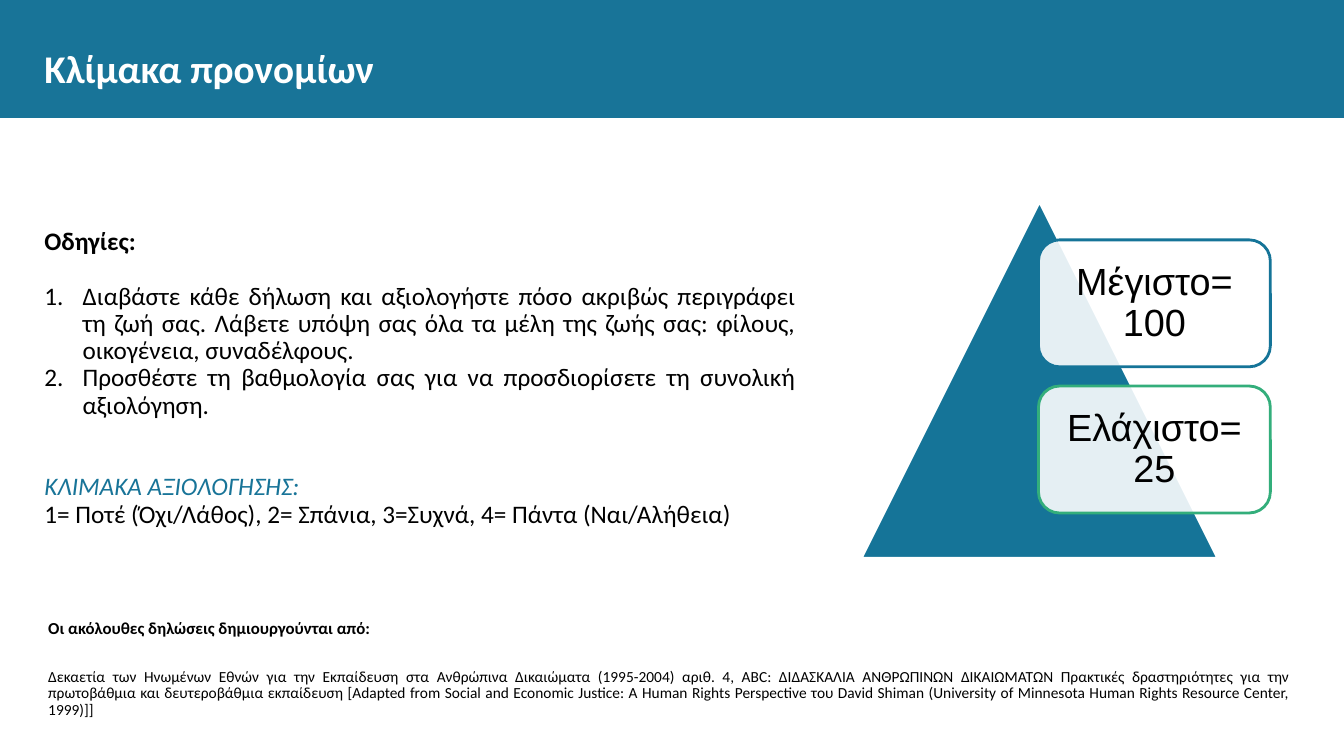
from lxml import etree
from pptx import Presentation
from pptx.dml.color import RGBColor
from pptx.enum.shapes import MSO_SHAPE
from pptx.enum.text import MSO_ANCHOR, PP_ALIGN
from pptx.oxml.ns import qn
from pptx.util import Pt

PX = 9144  # EMU, 100 px to the inch
TEAL = RGBColor(0x18, 0x74, 0x98)
PYRAMID_TEAL = RGBColor(0x15, 0x74, 0x98)
GREEN = RGBColor(0x33, 0xAE, 0x7B)
WHITE = RGBColor(0xFF, 0xFF, 0xFF)
BLACK = RGBColor(0, 0, 0)
LEFT, CENTER, JUSTIFY = PP_ALIGN.LEFT, PP_ALIGN.CENTER, PP_ALIGN.JUSTIFY
TOP, MIDDLE = MSO_ANCHOR.TOP, MSO_ANCHOR.MIDDLE

presentation = Presentation()
presentation.slide_width, presentation.slide_height = 1333 * PX, 750 * PX
slide = presentation.slides.add_slide(presentation.slide_layouts[6])


def add_filled_shape(kind, box, fill, line=None):
    shape = slide.shapes.add_shape(kind, *[length * PX for length in box])
    shape.shadow.inherit = False
    shape.fill.solid()
    shape.fill.fore_color.rgb = fill
    if line is None:
        shape.line.fill.background()
    else:
        shape.line.color.rgb = line
        shape.line.width = Pt(2)
    return shape


def write_paragraphs(shape, paragraphs, align, inset=0, anchor=TOP, spacing=0.9, font="Calibri"):
    """Fill a shape with (text, size, color, bold, italic, space before, numbered) rows."""
    frame = shape.text_frame
    frame.word_wrap = True
    frame.vertical_anchor = anchor
    frame.margin_left = frame.margin_right = inset * PX
    frame.margin_top = frame.margin_bottom = inset * PX
    for index, (text, size, color, bold, italic, before, numbered) in enumerate(paragraphs):
        paragraph = frame.add_paragraph() if index else frame.paragraphs[0]
        if numbered:
            properties = paragraph._p.get_or_add_pPr()
            properties.set("marL", str(38 * PX))
            properties.set("indent", str(-38 * PX))
            etree.SubElement(properties, qn("a:buFont"), typeface="+mj-lt")
            etree.SubElement(properties, qn("a:buAutoNum"), type="arabicPeriod")
        paragraph.alignment = align
        paragraph.line_spacing = spacing
        if before:
            paragraph.space_before = Pt(before)
        run = paragraph.add_run()
        run.text = text
        run.font.name = font
        run.font.size = Pt(size)
        run.font.bold = bold
        run.font.italic = italic
        run.font.color.rgb = color


# Header
add_filled_shape(MSO_SHAPE.RECTANGLE, (0, 0, 1333, 117), TEAL)
title = slide.shapes.add_textbox(44 * PX, 30 * PX, 1246 * PX, 74 * PX)
write_paragraphs(title, [("Κλίμακα προνομίων", 28, WHITE, True, False, 0, False)],
                 LEFT, anchor=MIDDLE, spacing=1.0)

# Instructions
instructions = slide.shapes.add_textbox(44 * PX, 227 * PX, 745 * PX, 315 * PX)
write_paragraphs(instructions, [
    ("Οδηγίες:", 18, BLACK, True, False, 0, False),
    ("Διαβάστε κάθε δήλωση και αξιολογήστε πόσο ακριβώς περιγράφει τη ζωή σας. "
     "Λάβετε υπόψη σας όλα τα μέλη της ζωής σας: φίλους, οικογένεια, συναδέλφους.",
     18, BLACK, False, False, 19.5, True),
    ("Προσθέστε τη βαθμολογία σας για να προσδιορίσετε τη συνολική αξιολόγηση.",
     18, BLACK, False, False, 0, True),
    ("ΚΛΙΜΑΚΑ ΑΞΙΟΛΟΓΗΣΗΣ:", 18, TEAL, False, True, 39, False),
    ("1= Ποτέ (Όχι/Λάθος), 2= Σπάνια, 3=Συχνά, 4= Πάντα (Ναι/Αλήθεια)",
     18, BLACK, False, False, 0, False),
], JUSTIFY)

# Score pyramid
add_filled_shape(MSO_SHAPE.ISOSCELES_TRIANGLE, (854, 200, 354, 354), PYRAMID_TEAL, WHITE)
scores = [("Μέγιστο= 100", PYRAMID_TEAL), ("Ελάχιστο= 25", GREEN)]
for index, (label, outline) in enumerate(scores):
    card = add_filled_shape(MSO_SHAPE.ROUNDED_RECTANGLE,
                            (1030, 238 + 145 * index, 230, 126), WHITE, outline)
    fill_color = card.fill._xPr.find(qn("a:solidFill"))[0]
    etree.SubElement(fill_color, qn("a:alpha"), val="89000")
    write_paragraphs(card, [(label, 27, BLACK, False, False, 0, False)],
                     CENTER, inset=11, anchor=MIDDLE, font="Arial")

# Source note
source_note = slide.shapes.add_textbox(38 * PX, 605 * PX, 1252 * PX, 102 * PX)
write_paragraphs(source_note, [
    ("Οι ακόλουθες δηλώσεις δημιουργούνται από:", 12, BLACK, True, False, 0, False),
    ("Δεκαετία των Ηνωμένων Εθνών για την Εκπαίδευση στα Ανθρώπινα Δικαιώματα "
     "(1995-2004) αριθ. 4, ABC: ΔΙΔΑΣΚΑΛΙΑ ΑΝΘΡΩΠΙΝΩΝ ΔΙΚΑΙΩΜΑΤΩΝ Πρακτικές "
     "δραστηριότητες για την πρωτοβάθμια και δευτεροβάθμια εκπαίδευση [Adapted from "
     "Social and Economic Justice: A Human Rights Perspective του David Shiman "
     "(University of Minnesota Human Rights Resource Center, 1999)]]",
     11, BLACK, False, False, 22, False),
], JUSTIFY, inset=10)

presentation.save("out.pptx")
